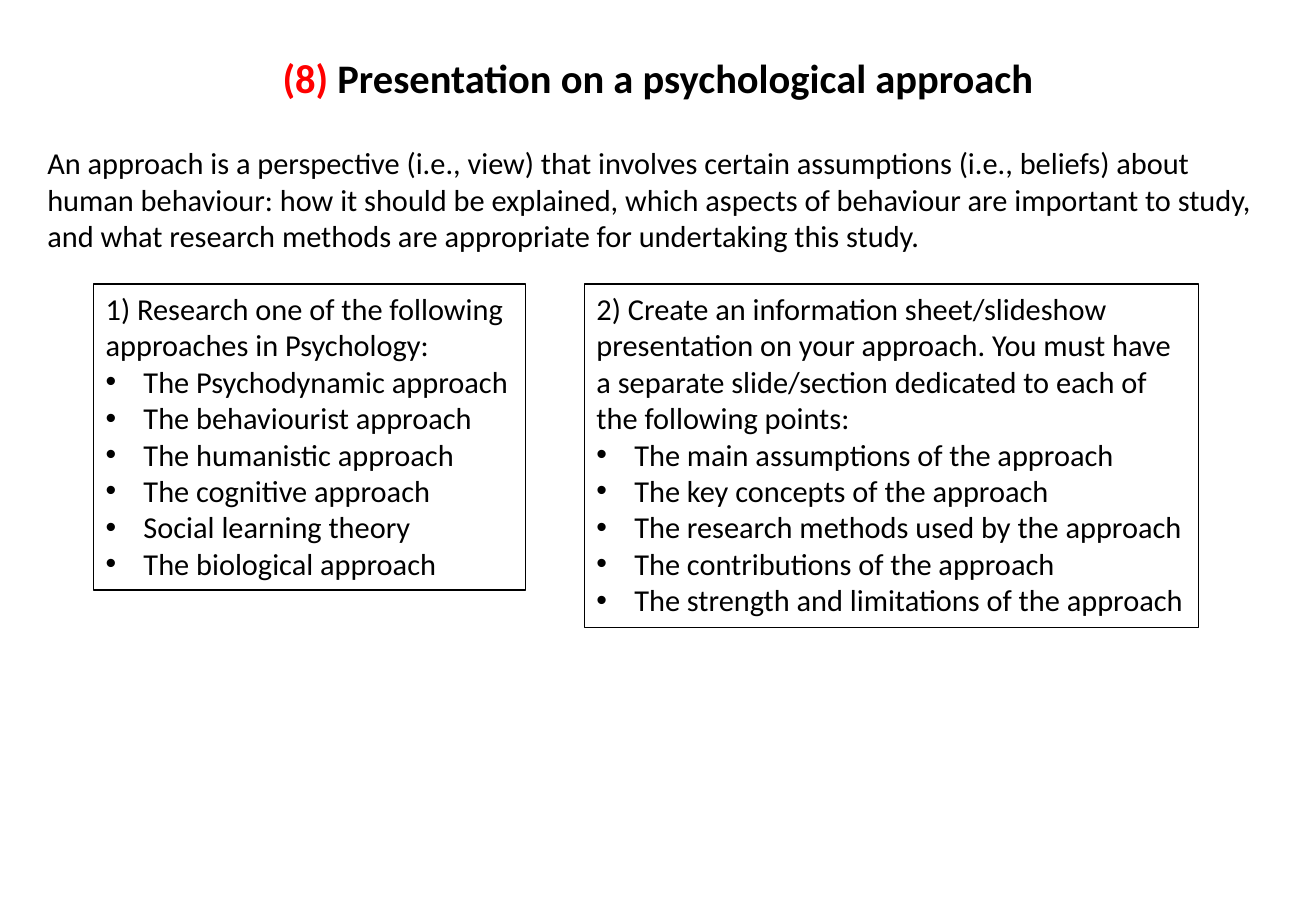
"""Build a slide that sets a presentation task on psychological approaches."""
from dataclasses import dataclass

from lxml.etree import SubElement
from pptx import Presentation
from pptx.dml.color import RGBColor
from pptx.enum.text import MSO_ANCHOR, PP_ALIGN
from pptx.oxml.ns import qn
from pptx.slide import Slide
from pptx.text.text import TextFrame, _Paragraph
from pptx.util import Cm, Pt

BLACK = RGBColor(0x00, 0x00, 0x00)
RED = RGBColor(0xFF, 0x00, 0x00)
FONT = "Calibri"
BODY_SIZE = 18
TITLE_SIZE = 24
BULLET_INDENT = Cm(0.79)
TASK_TOP = 5.94


@dataclass(frozen=True)
class Task:
    left: float
    width: float
    height: float
    intro: str
    points: tuple[str, ...]


TASKS = (
    Task(1.96, 9.02, 6.4,
         "1) Research one of the following approaches in Psychology:",
         ("The Psychodynamic approach",
          "The behaviourist approach",
          "The humanistic approach",
          "The cognitive approach",
          "Social learning theory",
          "The biological approach")),
    Task(12.22, 12.83, 7.19,
         "2) Create an information sheet/slideshow presentation on your "
         "approach. You must have a separate slide/section dedicated to each "
         "of the following points:",
         ("The main assumptions of the approach",
          "The key concepts of the approach",
          "The research methods used by the approach",
          "The contributions of the approach",
          "The strength and limitations of the approach")),
)
DEFINITION = (
    "An approach is a perspective (i.e., view) that involves certain "
    "assumptions (i.e., beliefs) about human behaviour: how it should be "
    "explained, which aspects of behaviour are important to study, and what "
    "research methods are appropriate for undertaking this study."
)


def add_text(s: Slide, left: float, top: float, width: float, height: float,
             outlined: bool = False) -> TextFrame:
    """Add a wrapping text box and return its text frame."""
    sp = s.shapes.add_textbox(Cm(left), Cm(top), Cm(width), Cm(height))
    if outlined:
        sp.line.color.rgb = BLACK
        sp.line.width = Pt(0.75)
    tf = sp.text_frame
    tf.word_wrap = True
    return tf


def add_run(p: _Paragraph, text: str, size: int = BODY_SIZE,
            color: RGBColor = BLACK, bold: bool = False) -> None:
    """Append one formatted run to a paragraph."""
    r = p.add_run()
    r.text = text
    r.font.name = FONT
    r.font.size = Pt(size)
    r.font.bold = bold
    r.font.color.rgb = color


def set_bullet(p: _Paragraph) -> None:
    """Give a paragraph a round bullet with a hanging indent."""
    pPr = p._p.get_or_add_pPr()
    pPr.set("marL", str(BULLET_INDENT))
    pPr.set("indent", str(-BULLET_INDENT))
    SubElement(pPr, qn("a:buFont"), typeface="Arial")
    SubElement(pPr, qn("a:buChar"), char="•")


def add_title(s: Slide) -> None:
    """Add the centred heading with its red number."""
    tf = add_text(s, 1.37, 0.71, 24.77, 1.8)
    tf.vertical_anchor = MSO_ANCHOR.MIDDLE
    p = tf.paragraphs[0]
    p.alignment = PP_ALIGN.CENTER
    add_run(p, "(8) ", TITLE_SIZE, RED, bold=True)
    add_run(p, "Presentation on a psychological approach", TITLE_SIZE, bold=True)


def add_task(s: Slide, task: Task) -> None:
    """Add an outlined box with an instruction and its bullet points."""
    tf = add_text(s, task.left, TASK_TOP, task.width, task.height, outlined=True)
    add_run(tf.paragraphs[0], task.intro)
    for point in task.points:
        p = tf.add_paragraph()
        set_bullet(p)
        add_run(p, point)


def main() -> None:
    """Build and save the slide."""
    prs = Presentation()
    prs.slide_width, prs.slide_height = Cm(27.51), Cm(19.05)
    s = prs.slides.add_slide(prs.slide_layouts[6])
    add_title(s)
    add_run(add_text(s, 0.74, 2.9, 26.06, 11.53).paragraphs[0], DEFINITION)
    for task in TASKS:
        add_task(s, task)
    prs.save("out.pptx")


if __name__ == "__main__":
    main()
